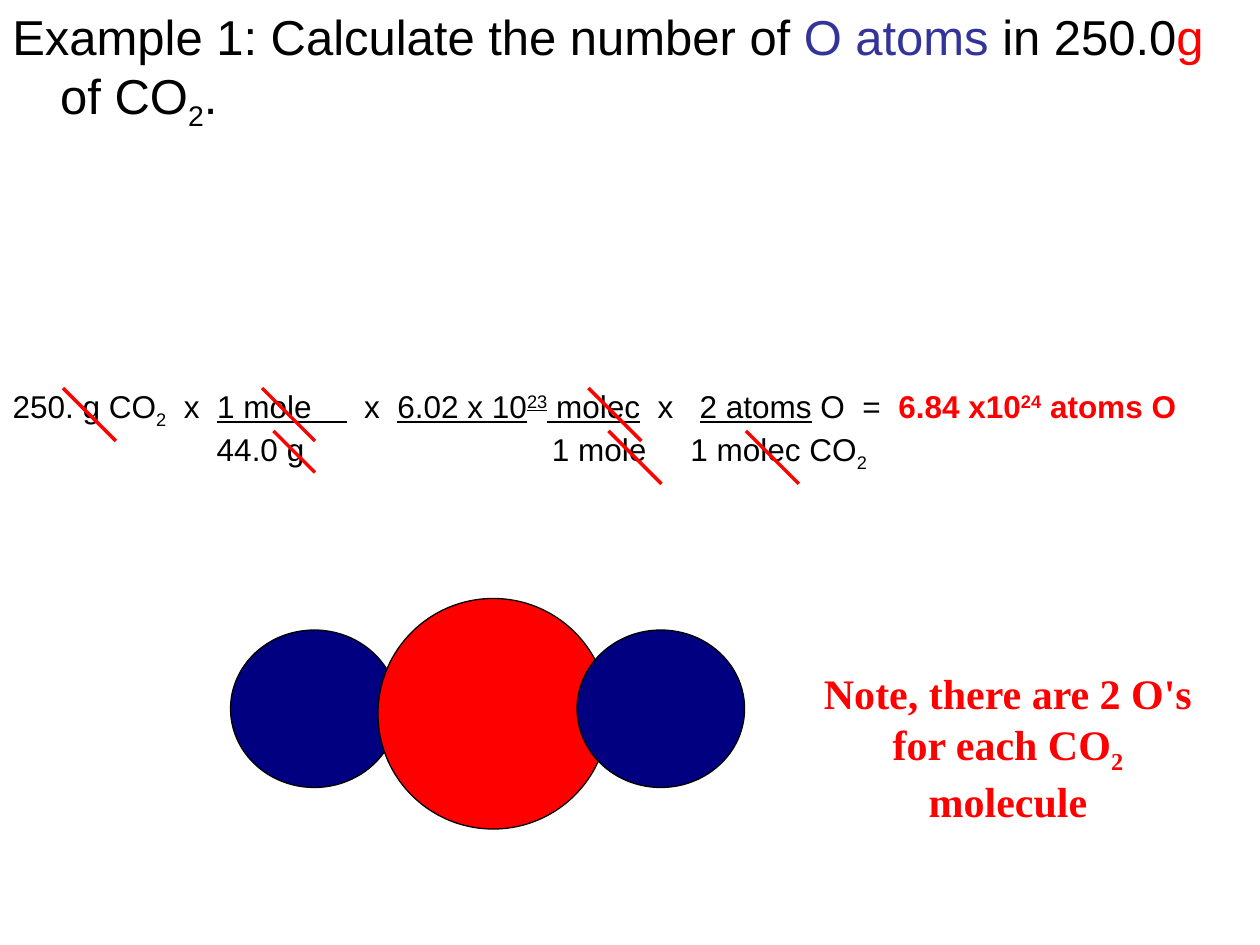
from lxml import etree
from pptx import Presentation
from pptx.dml.color import RGBColor
from pptx.enum import shapes, text
from pptx.oxml import ns
from pptx.util import Inches, Pt

BLACK, RED, NAVY, BLUE = "000000", "FF0000", "000080", "333399"
SUB, SUP = {"base": -25}, {"base": 30}
LINE = {"under": True}
BOLD = {"color": RED, "bold": True}

# Each run is (words, style changes)
QUESTION = [
    ("Example 1: Calculate the number of ", {}), ("O atoms", {"color": BLUE}),
    (" in 250.0", {}), ("g", {"color": RED}), (" of CO", {}), ("2", SUB), (".", {}),
]
TOP = [
    ("250. g CO", {}), ("2", SUB), ("  x  ", {}), ("1 mole    ", LINE),
    ("  x  ", {}), ("6.02 x 10", LINE), ("23", {**LINE, **SUP}),
    (" molec", LINE), ("  x   ", {}), ("2 atoms", LINE), (" O  =  ", {}),
    ("6.84 x10", BOLD), ("24", {**BOLD, **SUP}), (" atoms O", BOLD),
]
BOTTOM = [("\t44.0 g\t1 mole\t1 molec CO", {}), ("2", SUB)]
TABS = [1.62, 4.28, 5.38]
NOTE = [("Note, there are 2 O's for each CO", BOLD),
        ("2", {**BOLD, **SUB}), (" molecule", BOLD)]

# Cancelled units: left, top, size
STRIKES = [(5.92, 3.42, 0.42), (4.83, 3.42, 0.42), (4.67, 3.08, 0.42),
           (2.17, 3.42, 0.33), (2.08, 3.08, 0.42), (0.5, 3.08, 0.42)]
# Atoms: left, top, width, height, fill
ATOMS = [(1.83, 5, 1.33, 1.25, NAVY), (3, 4.75, 1.83, 1.83, RED),
         (4.58, 5, 1.33, 1.25, NAVY)]


def rgb(code):
    return RGBColor.from_string(code)


def write(para, runs, size, face="Arial"):
    for words, style in runs:
        run = para.add_run()
        run.text = words
        font = run.font
        font.name, font.size = face, Pt(size)
        font.bold = style.get("bold", False)
        font.underline = style.get("under", False)
        font.color.rgb = rgb(style.get("color", BLACK))
        if "base" in style:
            run._r.get_or_add_rPr().set("baseline", str(style["base"] * 1000))


def add_box(slide, *place):
    frame = slide.shapes.add_textbox(*map(Inches, place)).text_frame
    frame.word_wrap = True
    return frame


def set_tabs(para, stops):
    props = para._p.get_or_add_pPr()
    tabs = etree.SubElement(props, ns.qn("a:tabLst"))
    for stop in stops:
        etree.SubElement(tabs, ns.qn("a:tab"), pos=str(Inches(stop)), algn="l")


def add_strike(slide, left, top, size):
    ends = map(Inches, (left, top, left + size, top + size))
    strike = slide.shapes.add_connector(shapes.MSO_CONNECTOR.STRAIGHT, *ends)
    strike.line.color.rgb = rgb(RED)
    strike.line.width = Pt(2)
    etree.SubElement(strike._element.spPr, ns.qn("a:effectLst"))


def add_atom(slide, *place, fill):
    atom = slide.shapes.add_shape(shapes.MSO_SHAPE.OVAL, *map(Inches, place))
    atom.shadow.inherit = False
    atom.fill.solid()
    atom.fill.fore_color.rgb = rgb(fill)
    atom.line.color.rgb = rgb(BLACK)
    atom.line.width = Pt(0.75)


def main():
    deck = Presentation()
    deck.slide_width, deck.slide_height = Inches(10), Inches(7.5)
    slide = deck.slides.add_slide(deck.slide_layouts[5])

    title = slide.shapes.title
    title.left, title.top, title.width, title.height = map(Inches, (0, 1.5, 10, 3.5))
    frame = title.text_frame
    frame.auto_size = text.MSO_AUTO_SIZE.NONE
    frame.vertical_anchor = text.MSO_ANCHOR.MIDDLE
    frame.margin_top = Inches(0.37)
    for para, runs in ((frame.paragraphs[0], TOP), (frame.add_paragraph(), BOTTOM)):
        para.alignment = text.PP_ALIGN.LEFT
        write(para, runs, 18)
    set_tabs(para, TABS)

    para = add_box(slide, 0, 0, 10, 2.08).paragraphs[0]
    props = para._p.get_or_add_pPr()
    props.set("marL", str(Inches(0.38)))
    props.set("indent", str(Inches(-0.38)))
    write(para, QUESTION, 28)

    for strike in STRIKES:
        add_strike(slide, *strike)
    for *place, fill in ATOMS:
        add_atom(slide, *place, fill=fill)

    para = add_box(slide, 6.42, 5.25, 3.16, 1.31).paragraphs[0]
    para.alignment = text.PP_ALIGN.CENTER
    write(para, NOTE, 24, "Times New Roman")

    deck.save("out.pptx")


if __name__ == "__main__":
    main()
